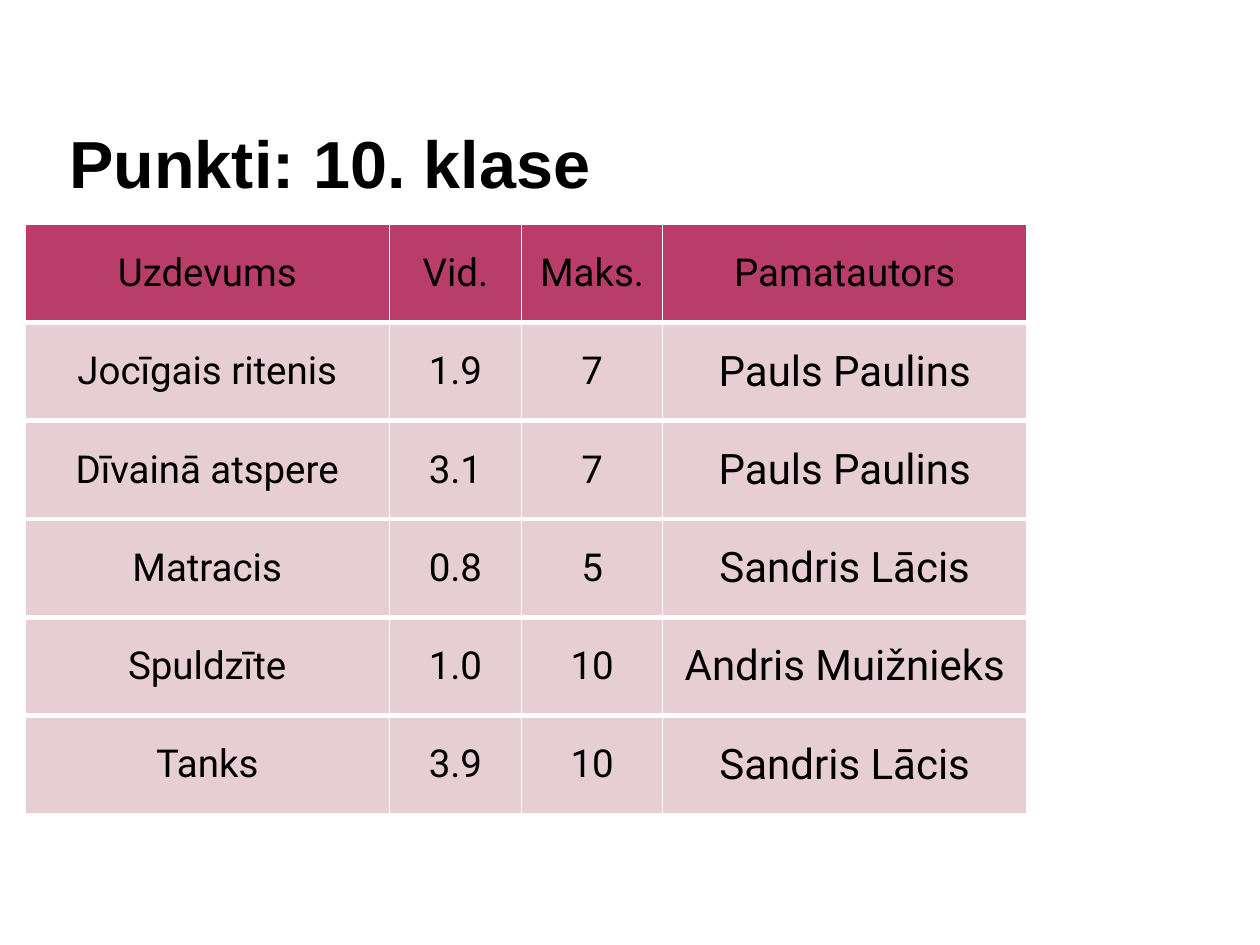
from dataclasses import dataclass

import pptx
import pptx.dml.color
import pptx.enum.text
import pptx.oxml
import pptx.oxml.ns
import pptx.util
from pptx.util import Inches


@dataclass(frozen=True)
class Theme:
    text: str = "000000"
    header: str = "B83D68"
    body: str = "E6CED4"
    border: str = "FFFFFF"
    title_font: str = "Arial"
    table_font: str = "Roboto"
    title_size: int = 38
    cell_size: int = 22
    author_size: int = 24
    thin: int = 1
    thick: int = 3


THEME = Theme()
COLUMN_WIDTHS = (2.89, 1.05, 1.12, 2.89)
ROW_HEIGHT = 0.78
ROWS = (
    ("Uzdevums", "Vid.", "Maks.", "Pamatautors"),
    ("Jocīgais ritenis", "1.9", "7", "Pauls Paulins"),
    ("Dīvainā atspere", "3.1", "7", "Pauls Paulins"),
    ("Matracis", "0.8", "5", "Sandris Lācis"),
    ("Spuldzīte", "1.0", "10", "Andris Muižnieks"),
    ("Tanks", "3.9", "10", "Sandris Lācis"),
)


def rgb(value):
    return pptx.dml.color.RGBColor.from_string(value)


def format_paragraph(p, font, size, align, bold=False):
    p.alignment = align
    p.font.name = font
    p.font.size = pptx.util.Pt(size)
    p.font.bold = bold
    p.font.color.rgb = rgb(THEME.text)


def add_title(slide, text):
    sp = slide.shapes.title
    sp.left, sp.top = Inches(0.5), Inches(0.35)
    sp.width, sp.height = Inches(7.92), Inches(1.25)
    tf = sp.text_frame
    tf.text = text
    tf.word_wrap = True
    tf.vertical_anchor = pptx.enum.text.MSO_ANCHOR.BOTTOM
    tf.margin_left = tf.margin_right = Inches(0.05)
    tf.margin_top = tf.margin_bottom = 0
    format_paragraph(tf.paragraphs[0], THEME.title_font, THEME.title_size,
                     pptx.enum.text.PP_ALIGN.LEFT, bold=True)


def set_borders(cell, top, bottom):
    props = cell._tc.get_or_add_tcPr()
    widths = {"L": THEME.thin, "R": THEME.thin, "T": top, "B": bottom}
    for side, width in widths.items():
        props.append(pptx.oxml.parse_xml(
            f'<a:ln{side} {pptx.oxml.ns.nsdecls("a")} w="{pptx.util.Pt(width)}">'
            f'<a:solidFill><a:srgbClr val="{THEME.border}"/></a:solidFill>'
            f'</a:ln{side}>'))


def fill_cell(cell, text, size, color):
    cell.text = text
    cell.vertical_anchor = pptx.enum.text.MSO_ANCHOR.MIDDLE
    cell.fill.solid()
    cell.fill.fore_color.rgb = rgb(color)
    format_paragraph(cell.text_frame.paragraphs[0], THEME.table_font, size,
                     pptx.enum.text.PP_ALIGN.CENTER)


def add_score_table(slide, rows):
    table = slide.shapes.add_table(
        len(rows), len(COLUMN_WIDTHS), Inches(0.2), Inches(1.78),
        Inches(sum(COLUMN_WIDTHS)), Inches(ROW_HEIGHT * len(rows))).table
    table.horz_banding = False
    for column, width in zip(table.columns, COLUMN_WIDTHS):
        column.width = Inches(width)
    last_row, last_col = len(rows) - 1, len(COLUMN_WIDTHS) - 1
    for i, row in enumerate(rows):
        table.rows[i].height = Inches(ROW_HEIGHT)
        for j, text in enumerate(row):
            cell = table.cell(i, j)
            set_borders(cell, THEME.thick if i > 0 else THEME.thin,
                        THEME.thick if i < last_row else THEME.thin)
            is_author = i > 0 and j == last_col
            fill_cell(cell, text,
                      THEME.author_size if is_author else THEME.cell_size,
                      THEME.body if i > 0 else THEME.header)


def main():
    prs = pptx.Presentation()
    prs.slide_width, prs.slide_height = Inches(10), Inches(7.5)
    slide = prs.slides.add_slide(prs.slide_layouts[5])
    add_title(slide, "Punkti: 10. klase")
    add_score_table(slide, ROWS)
    prs.save("out.pptx")


if __name__ == "__main__":
    main()
